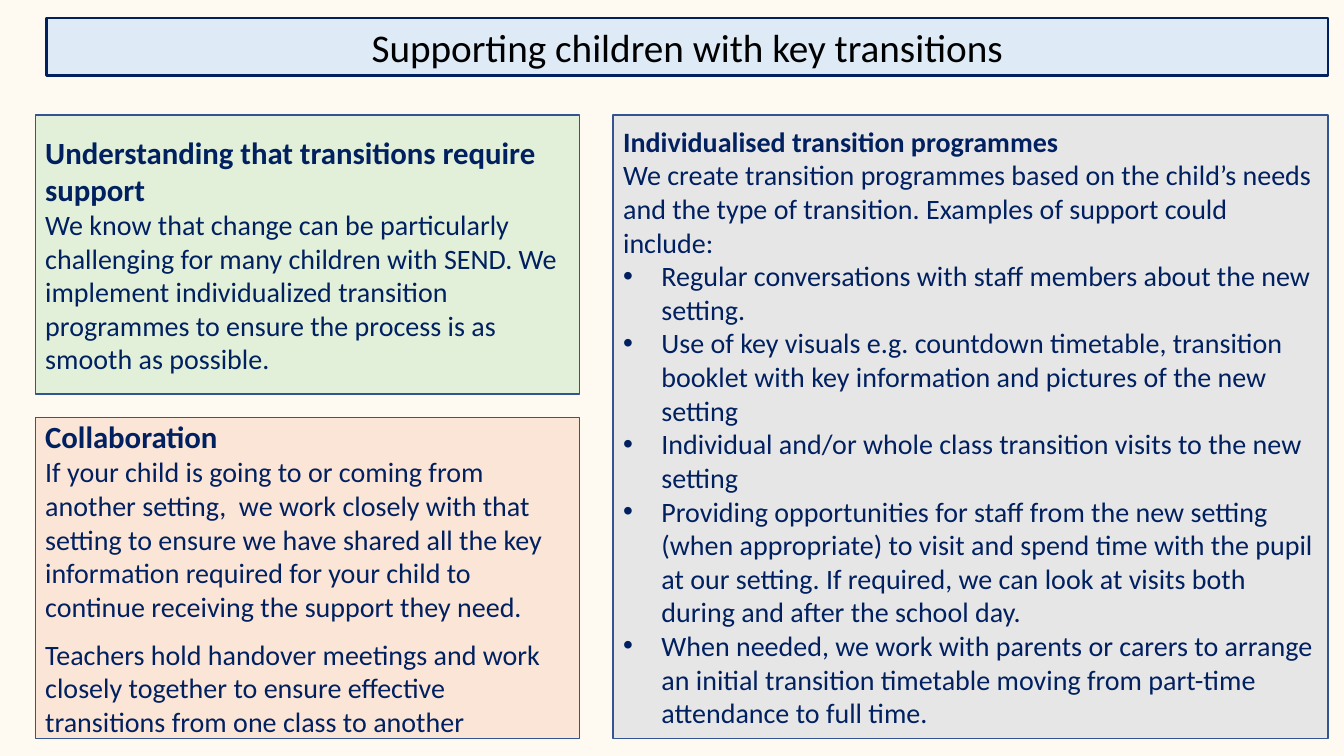
from lxml import etree
from pptx import Presentation
from pptx.dml.color import RGBColor
from pptx.enum.shapes import MSO_SHAPE
from pptx.enum.text import MSO_ANCHOR, MSO_AUTO_SIZE, PP_ALIGN
from pptx.oxml.ns import qn
from pptx.util import Inches, Pt

RECTANGLE = MSO_SHAPE.RECTANGLE
MIDDLE = MSO_ANCHOR.MIDDLE
NO_AUTOFIT = MSO_AUTO_SIZE.NONE
LEFT, CENTER = PP_ALIGN.LEFT, PP_ALIGN.CENTER

COLORS = {
    "background": "FFFAF1", "navy": "002060", "outline": "325491", "black": "000000",
    "blue": "DEEBF7", "green": "E2F0D9", "peach": "FBE5D6", "grey": "E7E6E6",
}

# Grid edges, in percent of the slide's width and height
COLUMN_1, COLUMN_1_END = 2.63, 43.14
COLUMN_2, RIGHT_EDGE = 45.61, 98.8
BODY_TOP, BODY_BOTTOM = 15.2, 97.7


class TransitionSlide:
    """Holds the shared style and the slide being filled."""

    font = "Calibri"
    hanging_indent = Inches(0.38)

    def __init__(self, deck):
        self.width, self.height = deck.slide_width, deck.slide_height
        self.slide = deck.slides.add_slide(deck.slide_layouts[1])
        background = self.slide.background.fill
        background.solid()
        background.fore_color.rgb = self.color("background")

    def color(self, name):
        return RGBColor.from_string(COLORS[name])

    def frame(self, panel, edges, fill, line="outline", line_width=1):
        """Place a panel between its left, top, right and bottom edges."""
        left, top, right, bottom = edges
        panel.left, panel.width = (int(self.width * x / 100) for x in (left, right - left))
        panel.top, panel.height = (int(self.height * y / 100) for y in (top, bottom - top))
        panel.fill.solid()
        panel.fill.fore_color.rgb = self.color(fill)
        panel.line.color.rgb = self.color(line)
        panel.line.width = Pt(line_width)
        text = panel.text_frame
        text.word_wrap, text.auto_size = True, NO_AUTOFIT
        text.vertical_anchor = MIDDLE
        return text

    def set_bullet(self, paragraph, bulleted):
        properties = paragraph._p.get_or_add_pPr()
        indent = self.hanging_indent if bulleted else 0
        properties.set("marL", str(int(indent)))
        properties.set("indent", str(int(-indent)))
        if bulleted:
            bullet_color = etree.SubElement(properties, qn("a:buClr"))
            etree.SubElement(bullet_color, qn("a:srgbClr"), val=COLORS["navy"])
            etree.SubElement(properties, qn("a:buFont"), typeface="Arial")
            etree.SubElement(properties, qn("a:buChar"), char="•")
        else:
            etree.SubElement(properties, qn("a:buNone"))

    def fill_paragraph(self, paragraph, words, size, color="navy", bold=False,
                       align=LEFT, bulleted=False, before=0):
        self.set_bullet(paragraph, bulleted)
        paragraph.text = words
        paragraph.alignment = align
        paragraph.space_before = Pt(before)
        font = paragraph.font
        font.name, font.size, font.bold = self.font, Pt(size), bold
        font.color.rgb = self.color(color)

    def title(self, words, edges):
        text = self.frame(self.slide.shapes.title, edges, "blue", "navy", 1.75)
        self.fill_paragraph(text.paragraphs[0], words, 28, "black", align=CENTER)

    def card(self, heading, passages, edges, fill):
        box = self.slide.shapes.add_shape(RECTANGLE, 0, 0, 0, 0)
        box.shadow.inherit = False
        text = self.frame(box, edges, fill)
        self.fill_paragraph(text.paragraphs[0], heading, 22, bold=True)
        for index, passage in enumerate(passages):
            self.fill_paragraph(text.add_paragraph(), passage, 20, before=10 if index else 0)

    def bullet_panel(self, heading, intro, points, edges, fill):
        text = self.frame(self.slide.placeholders[1], edges, fill)
        self.fill_paragraph(text.paragraphs[0], heading, 20, bold=True)
        self.fill_paragraph(text.add_paragraph(), intro, 20)
        for point in points:
            self.fill_paragraph(text.add_paragraph(), point, 20, bulleted=True)


def main():
    deck = Presentation()
    deck.slide_width, deck.slide_height = Inches(13.33), Inches(7.5)
    page = TransitionSlide(deck)

    # Title bar
    page.title("Supporting children with key transitions", (3.45, 2.4, RIGHT_EDGE, 10))

    # Left column: why and with whom
    page.card(
        "Understanding that transitions require support",
        ["We know that change can be particularly challenging for many children with SEND. "
         "We implement individualized transition programmes to ensure the process is as "
         "smooth as possible."],
        (COLUMN_1, BODY_TOP, COLUMN_1_END, 52.13), "green")
    page.card(
        "Collaboration",
        ["If your child is going to or coming from another setting,  we work closely with "
         "that setting to ensure we have shared all the key information required for your "
         "child to continue receiving the support they need.",
         "Teachers hold handover meetings and work closely together to ensure effective "
         "transitions from one class to another"],
        (COLUMN_1, 55.2, COLUMN_1_END, BODY_BOTTOM), "peach")

    # Right column: examples of support
    page.bullet_panel(
        "Individualised transition programmes",
        "We create transition programmes based on the child’s needs and the type of "
        "transition. Examples of support could include:",
        ["Regular conversations with staff members about the new setting.",
         "Use of key visuals e.g. countdown timetable, transition booklet with key "
         "information and pictures of the new setting",
         "Individual and/or whole class transition visits to the new setting",
         "Providing opportunities for staff from the new setting (when appropriate) to "
         "visit and spend time with the pupil at our setting. If required, we can look at "
         "visits both during and after the school day.",
         "When needed, we work with parents or carers to arrange an initial transition "
         "timetable moving from part-time attendance to full time."],
        (COLUMN_2, BODY_TOP, RIGHT_EDGE, BODY_BOTTOM), "grey")

    deck.save("out.pptx")


if __name__ == "__main__":
    main()
